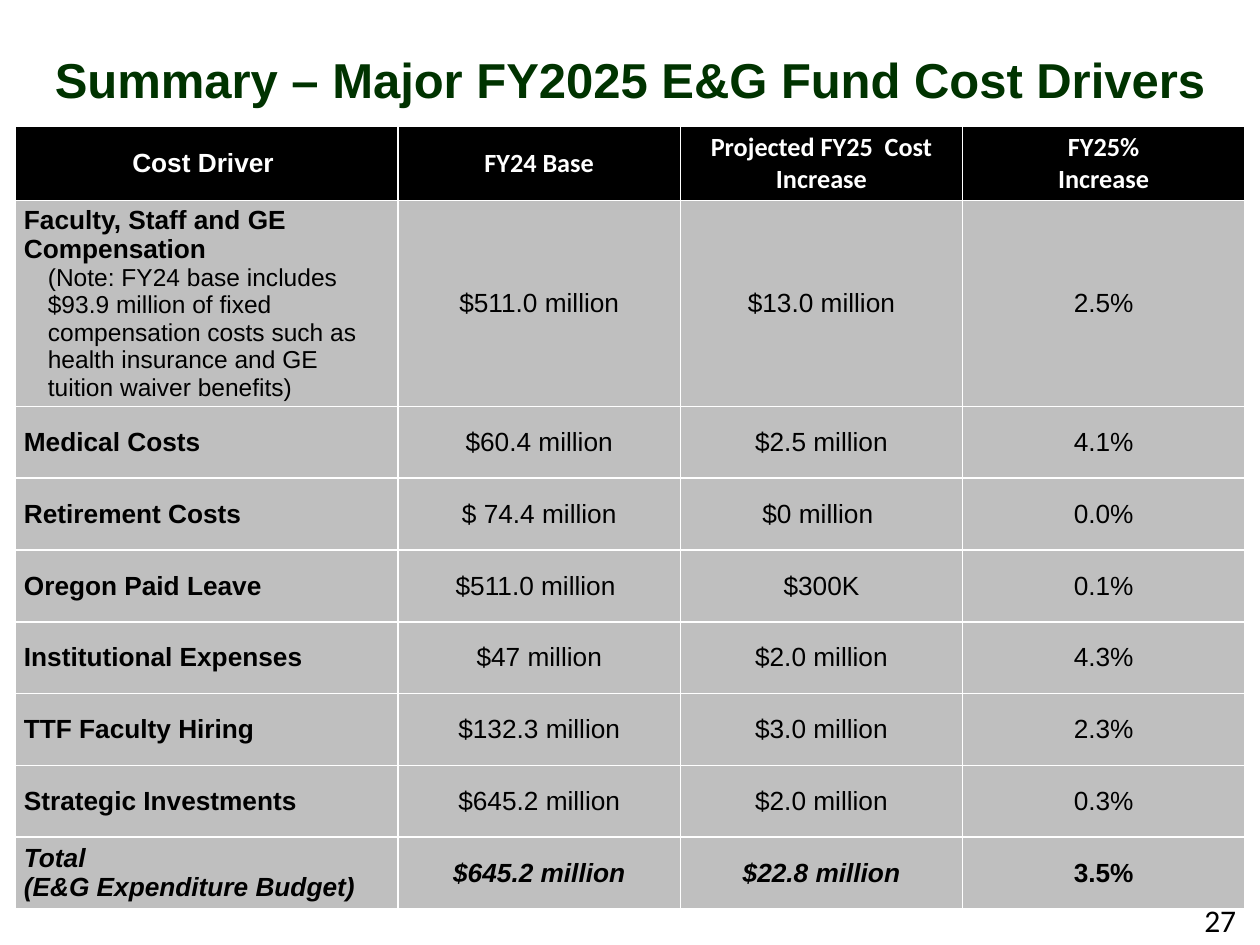
from pptx import Presentation
from pptx.dml.color import RGBColor
from pptx.enum.text import MSO_ANCHOR, PP_ALIGN
from pptx.util import Inches, Pt

GREEN = RGBColor(0x00, 0x33, 0x00)
BLACK = RGBColor(0x00, 0x00, 0x00)
WHITE = RGBColor(0xFF, 0xFF, 0xFF)
GRAY = RGBColor(0xBF, 0xBF, 0xBF)

HEADERS = ["Cost Driver ", "FY24 Base", "Projected FY25  Cost Increase",
           "FY25%\nIncrease"]
DRIVERS = [
    ("Faculty, Staff and GE Compensation",
     "$511.0 million", "$13.0 million", "2.5%"),
    ("Medical Costs", "$60.4 million", "$2.5 million", "4.1%"),
    ("Retirement Costs", "$ 74.4 million", "$0 million ", "0.0%"),
    ("Oregon Paid Leave", "$511.0 million ", "$300K", "0.1%"),
    ("Institutional Expenses", "$47 million", "$2.0 million", "4.3%"),
    ("TTF Faculty Hiring", "$132.3 million", "$3.0 million", "2.3%"),
    ("Strategic Investments", "$645.2 million", "$2.0 million", "0.3%"),
    ("Total\n(E&G Expenditure Budget)",
     "$645.2 million", "$22.8 million", "3.5%"),
]
NOTE = ("(Note: FY24 base includes $93.9 million of fixed compensation costs "
        "such as health insurance and GE tuition waiver benefits)")
COL_WIDTHS = [3.04, 2.24, 2.24, 2.24]
ROW_HEIGHTS = [0.59, 0.58] + [0.57] * 7


def add_run(p, text, size, color=BLACK, font="Arial", bold=False, italic=False):
    r = p.add_run()
    r.text = text
    r.font.size = Pt(size)
    r.font.name = font
    r.font.bold = bold
    r.font.italic = italic
    r.font.color.rgb = color


def fill_cell(cell, text, fill, align=PP_ALIGN.CENTER, **style):
    cell.fill.solid()
    cell.fill.fore_color.rgb = fill
    cell.vertical_anchor = MSO_ANCHOR.MIDDLE
    cell.margin_left = cell.margin_right = Inches(0.07)
    cell.margin_top = cell.margin_bottom = Inches(0.04)
    tf = cell.text_frame
    for i, line in enumerate(text.split("\n")):
        p = tf.add_paragraph() if i else tf.paragraphs[0]
        p.alignment = align
        add_run(p, line, 15, **style)


def add_title(s, text):
    title = s.shapes.title
    title.left, title.top = Inches(0), Inches(0.17)
    title.width, title.height = Inches(10), Inches(0.91)
    tf = title.text_frame
    tf.vertical_anchor = MSO_ANCHOR.MIDDLE
    p = tf.paragraphs[0]
    p.alignment = PP_ALIGN.CENTER
    add_run(p, text, 28, GREEN, bold=True)


def add_cost_table(s):
    # The default table style supplies the white grid and thick header rule
    table = s.shapes.add_table(
        len(ROW_HEIGHTS), len(COL_WIDTHS), Inches(0.12), Inches(1),
        Inches(sum(COL_WIDTHS)), Inches(sum(ROW_HEIGHTS))).table
    table.horz_banding = False
    for col, width in zip(table.columns, COL_WIDTHS):
        col.width = Inches(width)
    for row, height in zip(table.rows, ROW_HEIGHTS):
        row.height = Inches(height)

    # Header row
    for c, text in enumerate(HEADERS):
        fill_cell(table.cell(0, c), text, BLACK, color=WHITE, bold=True,
                  font="Calibri" if c else "Arial")

    # Cost drivers, with an emphasised total
    for r, values in enumerate(DRIVERS, start=1):
        total = r == len(DRIVERS)
        for c, text in enumerate(values):
            fill_cell(table.cell(r, c), text, GRAY,
                      align=PP_ALIGN.CENTER if c else PP_ALIGN.LEFT,
                      bold=total or c == 0, italic=total and c < 3)

    # Indented note under the compensation driver
    p = table.cell(1, 0).text_frame.add_paragraph()
    p.level = 1
    pPr = p._p.get_or_add_pPr()
    pPr.set("marL", str(Inches(0.19)))
    pPr.set("indent", "0")
    p.alignment = PP_ALIGN.LEFT
    add_run(p, NOTE, 14)


def add_page_number(s, number):
    box = s.shapes.add_textbox(Inches(7.58), Inches(7.1),
                               Inches(2.33), Inches(0.4))
    tf = box.text_frame
    tf.word_wrap = True
    p = tf.paragraphs[0]
    p.alignment = PP_ALIGN.RIGHT
    add_run(p, number, 18, font="Calibri")


def main():
    prs = Presentation()
    prs.slide_width, prs.slide_height = Inches(10), Inches(7.5)
    s = prs.slides.add_slide(prs.slide_layouts[5])
    add_title(s, "Summary – Major FY2025 E&G Fund Cost Drivers")
    add_cost_table(s)
    add_page_number(s, "27")
    prs.save("out.pptx")


if __name__ == "__main__":
    main()
